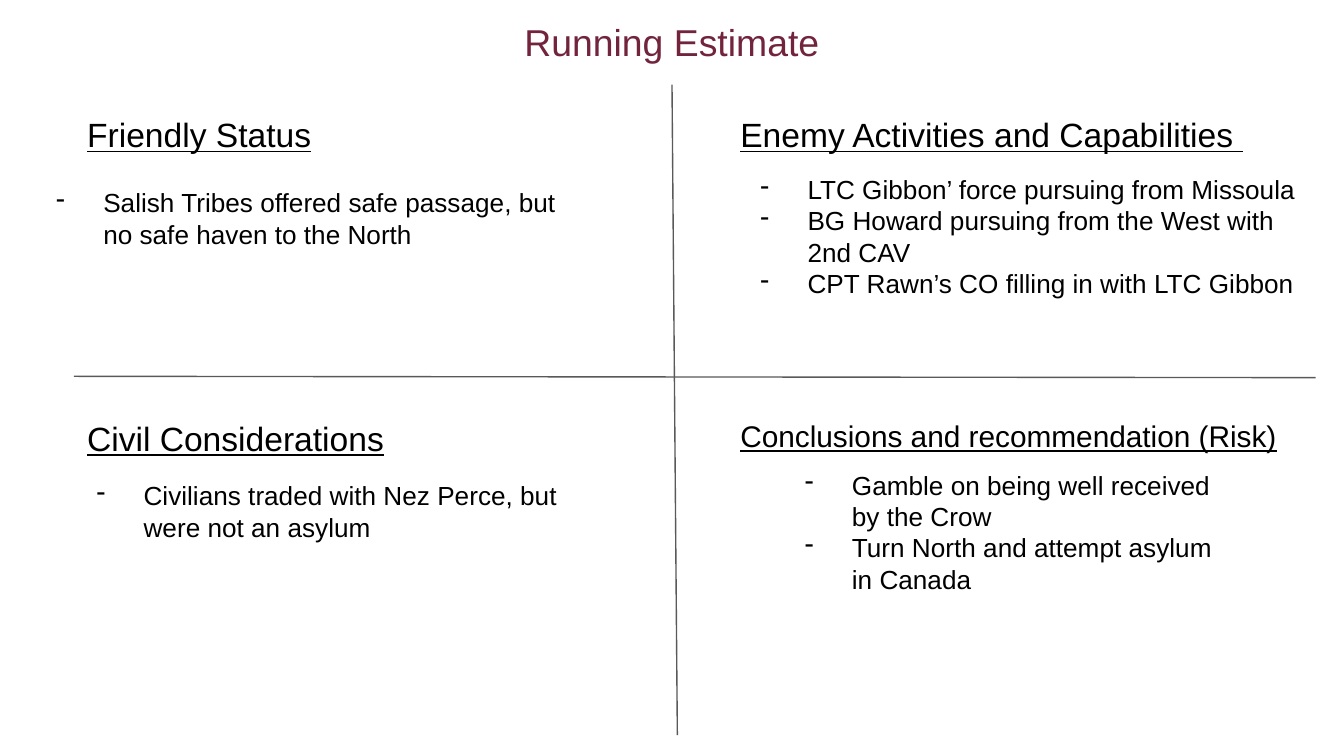
from lxml import etree
from pptx import Presentation
from pptx.dml.color import RGBColor
from pptx.enum.shapes import MSO_CONNECTOR
from pptx.enum.text import MSO_ANCHOR, MSO_AUTO_SIZE, PP_ALIGN
from pptx.oxml.ns import qn
from pptx.util import Inches, Pt

STRAIGHT = MSO_CONNECTOR.STRAIGHT
TOP, MIDDLE = MSO_ANCHOR.TOP, MSO_ANCHOR.MIDDLE
LEFT, CENTER = PP_ALIGN.LEFT, PP_ALIGN.CENTER
FIT_SHAPE, FIXED = MSO_AUTO_SIZE.SHAPE_TO_FIT_TEXT, MSO_AUTO_SIZE.NONE

BLACK = RGBColor(0x00, 0x00, 0x00)
MAROON = RGBColor(0x72, 0x24, 0x3D)
GRAY = RGBColor(0x59, 0x59, 0x59)
FONT = "Arial"
LINE_HEIGHT = 1.2


def add_dash(para):
    """Give the paragraph a hanging dash bullet."""
    properties = para._p.get_or_add_pPr()
    properties.set("marL", str(Inches(0.5)))
    properties.set("indent", str(Inches(-0.35)))
    color = etree.SubElement(properties, qn("a:buClr"))
    etree.SubElement(color, qn("a:srgbClr"), val=str(BLACK))
    etree.SubElement(properties, qn("a:buChar"), char="-")


def add_text(lines, left, top, width, height, size=14, color=BLACK, underline=False,
             dashes=False, align=LEFT, anchor=TOP, inset=0.1, fit=FIT_SHAPE):
    box = page.shapes.add_textbox(Inches(left), Inches(top), Inches(width), Inches(height))
    frame = box.text_frame
    frame.word_wrap = True
    frame.auto_size = fit
    frame.vertical_anchor = anchor
    frame.margin_left = frame.margin_right = Inches(inset)
    frame.margin_top = frame.margin_bottom = Inches(inset)
    for index, line in enumerate(lines):
        para = frame.paragraphs[0] if index == 0 else frame.add_paragraph()
        para.alignment = align
        para.line_spacing = Pt(size * LINE_HEIGHT)
        if dashes:
            add_dash(para)
        span = para.add_run()
        span.text = line
        span.font.name = FONT
        span.font.size = Pt(size)
        span.font.color.rgb = color
        span.font.underline = underline


deck = Presentation()
deck.slide_width = Inches(10)
deck.slide_height = deck.slide_width * 9 // 16
page = deck.slides.add_slide(deck.slide_layouts[6])

add_text(["Running Estimate"], 1, 0, 8, 0.62, size=20, color=MAROON,
         align=CENTER, anchor=MIDDLE, inset=0.05, fit=FIXED)

# Dividers between the four quadrants
for ends in [(5, 0.63, 5.04, 5.47), (0.55, 2.8, 9.79, 2.81)]:
    divider = page.shapes.add_connector(STRAIGHT, *[Inches(end) for end in ends])
    divider.line.color.rgb = GRAY
    divider.line.width = Pt(0.75)
    etree.SubElement(divider._element.spPr, qn("a:effectLst"))

# Quadrant headings: text, left, top, width, height, size
headings = [
    ("Friendly Status", 0.55, 0.75, 3.18, 0.5, 18),
    ("Enemy Activities and Capabilities ", 5.41, 0.75, 4.38, 0.5, 18),
    ("Civil Considerations", 0.55, 3.01, 3.26, 0.5, 18),
    ("Conclusions and recommendation (Risk)", 5.41, 3.01, 4.59, 0.47, 16),
]
for heading, left, top, width, height, size in headings:
    add_text([heading], left, top, width, height, size=size, underline=True)

# Quadrant points: lines, left, top, width, height
points = [
    (["Salish Tribes offered safe passage, but no safe haven to the North"],
     0.17, 1.29, 4.18, 0.91),
    (["Civilians traded with Nez Perce, but were not an asylum"],
     0.47, 3.47, 4.01, 0.91),
    (["LTC Gibbon’ force pursuing from Missoula",
      "BG Howard pursuing from the West with 2nd CAV",
      "CPT Rawn’s CO filling in with LTC Gibbon"],
     5.41, 1.19, 4.48, 1.14),
    (["Gamble on being well received by the Crow",
      "Turn North and attempt asylum in Canada"],
     5.74, 3.39, 3.58, 1.14),
]
for lines, left, top, width, height in points:
    add_text(lines, left, top, width, height, dashes=True)

deck.save("out.pptx")
